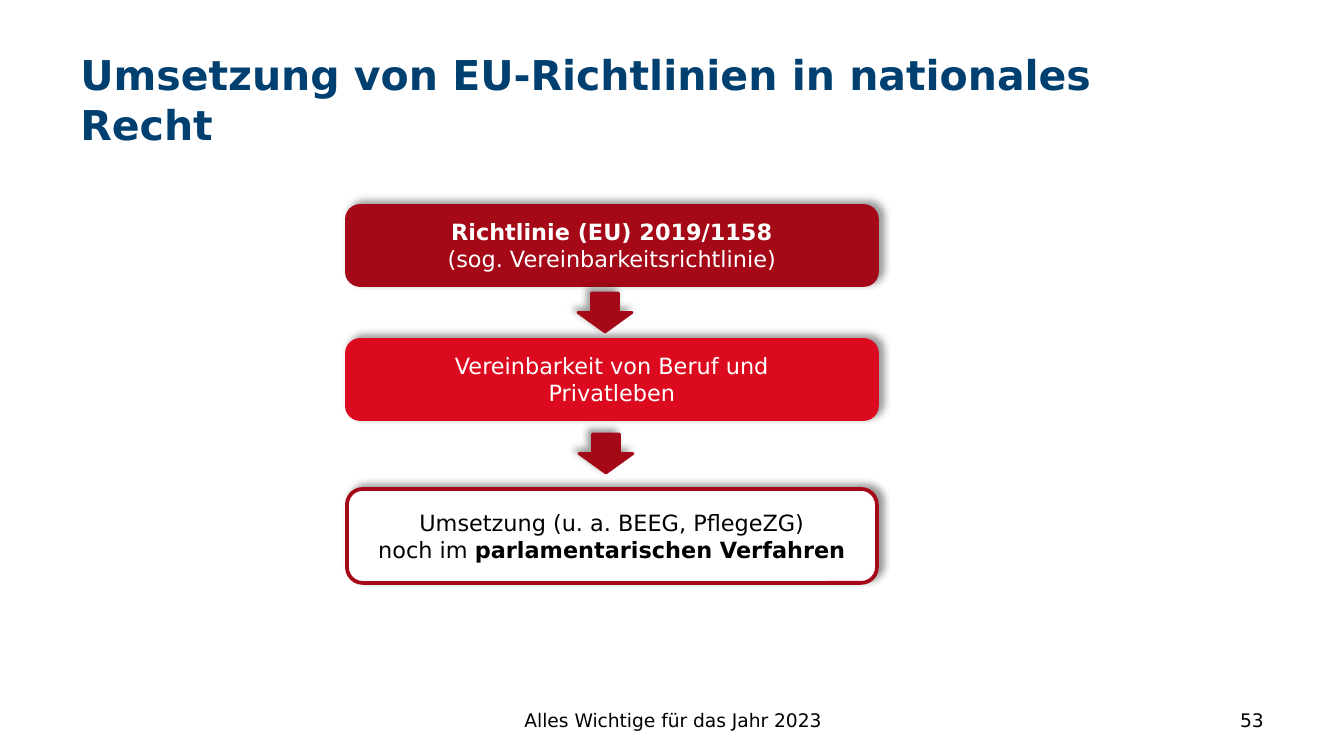
from dataclasses import dataclass

import lxml.etree
import pptx
import pptx.dml.color
import pptx.enum.shapes
import pptx.enum.text
import pptx.oxml.ns
import pptx.util

RGBColor = pptx.dml.color.RGBColor
MSO_SHAPE = pptx.enum.shapes.MSO_SHAPE
PP_ALIGN = pptx.enum.text.PP_ALIGN
MSO_ANCHOR = pptx.enum.text.MSO_ANCHOR
qn = pptx.oxml.ns.qn

NAVY = RGBColor(0x00, 0x40, 0x70)
DARK_RED = RGBColor(0xA5, 0x08, 0x16)
RED = RGBColor(0xDC, 0x0A, 0x1E)
WHITE = RGBColor(0xFF, 0xFF, 0xFF)
BLACK = RGBColor(0x00, 0x00, 0x00)

FONT = "DejaVu Sans"
PX_PER_INCH = 134.4
BOX_LEFT, BOX_WIDTH = 347, 530
ARROW_WIDTH, ARROW_HEIGHT = 54, 39


def px(n: int) -> int:
    return round(n * 914400 / PX_PER_INCH)


@dataclass
class Span:
    text: str
    bold: bool = False


@dataclass
class Step:
    top: int
    height: int
    fill: RGBColor
    line: RGBColor
    color: RGBColor
    lines: list[list[Span]]


@dataclass
class Arrow:
    left: int
    top: int


@dataclass
class Label:
    left: int
    width: int
    text: str
    align: PP_ALIGN


STEPS = [
    Step(206, 79, DARK_RED, DARK_RED, WHITE, [
        [Span("Richtlinie (EU) 2019/1158", True)],
        [Span("(sog. Vereinbarkeitsrichtlinie)")]]),
    Step(340, 79, RED, RED, WHITE, [
        [Span("Vereinbarkeit von Beruf und")],
        [Span("Privatleben")]]),
    Step(489, 94, WHITE, DARK_RED, BLACK, [
        [Span("Umsetzung (u. a. BEEG, PflegeZG)")],
        [Span("noch im "), Span("parlamentarischen Verfahren", True)]]),
]
ARROWS = [Arrow(578, 293), Arrow(579, 434)]
LABELS = [
    Label(460, 426, "Alles Wichtige für das Jahr 2023", PP_ALIGN.CENTER),
    Label(964, 313, "53", PP_ALIGN.RIGHT),
]


def style_font(font, size: int, color: RGBColor, bold: bool = False) -> None:
    font.name = FONT
    font.size = pptx.util.Pt(size)
    font.bold = bold
    font.color.rgb = color


def add_shadowed(slide, kind: MSO_SHAPE, left: int, top: int, width: int, height: int,
                 fill: RGBColor, line: RGBColor, line_width: float, angle: int):
    sp = slide.shapes.add_shape(kind, px(left), px(top), px(width), px(height))
    sp.fill.solid()
    sp.fill.fore_color.rgb = fill
    sp.line.color.rgb = line
    sp.line.width = pptx.util.Pt(line_width)
    # Soft outer shadow
    sp.shadow.inherit = False
    effects = sp._element.spPr.find(qn("a:effectLst"))
    shadow = lxml.etree.SubElement(
        effects, qn("a:outerShdw"), blurRad=str(pptx.util.Pt(4)),
        dist=str(pptx.util.Pt(3)), dir=str(angle * 60000), rotWithShape="0")
    color = lxml.etree.SubElement(shadow, qn("a:srgbClr"), val=str(BLACK))
    lxml.etree.SubElement(color, qn("a:alpha"), val="40000")
    return sp


def add_step(slide, step: Step) -> None:
    sp = add_shadowed(slide, MSO_SHAPE.ROUNDED_RECTANGLE, BOX_LEFT, step.top, BOX_WIDTH,
                      step.height, step.fill, step.line, 2, 315)
    tf = sp.text_frame
    tf.word_wrap = True
    tf.vertical_anchor = MSO_ANCHOR.MIDDLE
    tf.margin_left = tf.margin_right = px(5)
    tf.margin_top = tf.margin_bottom = px(7)
    p = tf.paragraphs[0]
    p.alignment = PP_ALIGN.CENTER
    style_font(p.font, 12, step.color)
    for i, line in enumerate(step.lines):
        if i:
            p.add_line_break()
        for span in line:
            r = p.add_run()
            r.text = span.text
            style_font(r.font, 12, step.color, span.bold)


def add_arrow(slide, arrow: Arrow) -> None:
    add_shadowed(slide, MSO_SHAPE.DOWN_ARROW, arrow.left, arrow.top, ARROW_WIDTH,
                 ARROW_HEIGHT, DARK_RED, DARK_RED, 1.5, 225)


def add_label(slide, label: Label) -> None:
    box = slide.shapes.add_textbox(px(label.left), px(700), px(label.width), px(40))
    tf = box.text_frame
    tf.word_wrap = True
    tf.vertical_anchor = MSO_ANCHOR.MIDDLE
    tf.text = label.text
    p = tf.paragraphs[0]
    p.alignment = label.align
    style_font(p.runs[0].font, 10, BLACK)


def add_title(slide, text: str) -> None:
    title = slide.shapes.title
    title.left, title.top, title.width, title.height = px(67), px(43), px(1090), px(59)
    tf = title.text_frame
    tf.text = text
    tf.word_wrap = True
    tf.auto_size = pptx.enum.text.MSO_AUTO_SIZE.NONE
    tf.vertical_anchor = MSO_ANCHOR.TOP
    p = tf.paragraphs[0]
    p.alignment = PP_ALIGN.LEFT
    style_font(p.runs[0].font, 22, NAVY, True)


def main() -> None:
    prs = pptx.Presentation()
    prs.slide_width, prs.slide_height = px(1344), px(756)
    slide = prs.slides.add_slide(prs.slide_layouts[5])

    # Title, footer and page number
    add_title(slide, "Umsetzung von EU-Richtlinien in nationales Recht")
    for label in LABELS:
        add_label(slide, label)

    # Flow from directive to national law
    for step in STEPS:
        add_step(slide, step)
    for arrow in ARROWS:
        add_arrow(slide, arrow)

    prs.save("out.pptx")


if __name__ == "__main__":
    main()
